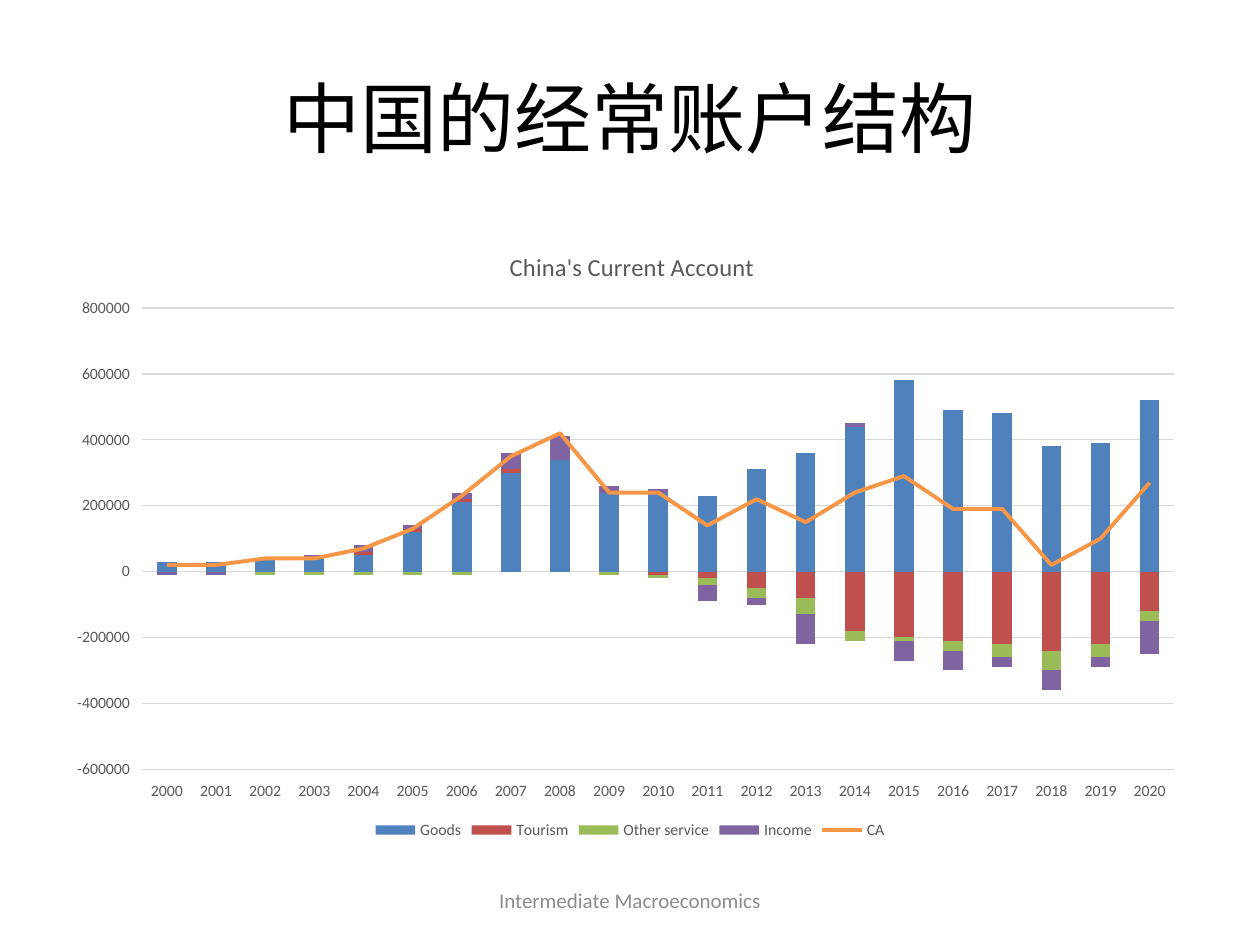
from lxml import etree
from pptx import Presentation
from pptx.chart.data import CategoryChartData
from pptx.dml.color import RGBColor
from pptx.enum.chart import (XL_CHART_TYPE, XL_LEGEND_POSITION, XL_MARKER_STYLE,
                             XL_TICK_LABEL_POSITION, XL_TICK_MARK)
from pptx.enum.text import MSO_ANCHOR, PP_ALIGN
from pptx.oxml import parse_xml
from pptx.oxml.ns import nsdecls, qn
from pptx.util import Cm, Pt

STACKED = XL_CHART_TYPE.COLUMN_STACKED
BOTTOM = XL_LEGEND_POSITION.BOTTOM
NO_MARKER = XL_MARKER_STYLE.NONE
LOW_LABELS = XL_TICK_LABEL_POSITION.LOW
NO_TICK = XL_TICK_MARK.NONE
MIDDLE = MSO_ANCHOR.MIDDLE
CENTER = PP_ALIGN.CENTER

FONT = "Calibri"
BLACK = RGBColor(0x00, 0x00, 0x00)
FOOTER_GRAY = RGBColor(0x8C, 0x8C, 0x8C)
LABEL_GRAY = RGBColor(0x59, 0x59, 0x59)
GRID_GRAY = RGBColor(0xD9, 0xD9, 0xD9)
BLUE = RGBColor(0x4F, 0x81, 0xBD)
RED = RGBColor(0xC0, 0x50, 0x4D)
GREEN = RGBColor(0x9B, 0xBB, 0x59)
PURPLE = RGBColor(0x80, 0x64, 0xA2)
ORANGE = RGBColor(0xF7, 0x96, 0x46)

# Current account items, in units of 10,000
YEARS = [str(year) for year in range(2000, 2021)]
UNIT = 10000
ACCOUNTS = [
    ("Goods", BLUE, [3, 3, 4, 4, 5, 12, 21, 30, 34, 24, 24,
                     23, 31, 36, 44, 58, 49, 48, 38, 39, 52]),
    ("Tourism", RED, [0, 0, 0, 0, 1, 1, 1, 1, 0, 0, -1,
                      -2, -5, -8, -18, -20, -21, -22, -24, -22, -12]),
    ("Other service", GREEN, [0, 0, -1, -1, -1, -1, -1, 0, 0, -1, -1,
                              -2, -3, -5, -3, -1, -3, -4, -6, -4, -3]),
    ("Income", PURPLE, [-1, -1, 0, 1, 2, 1, 2, 5, 7, 2, 1,
                        -5, -2, -9, 1, -6, -6, -3, -6, -3, -10]),
    ("CA", ORANGE, [2, 2, 4, 4, 7, 13, 23, 35, 42, 24, 24,
                    14, 22, 15, 24, 29, 19, 19, 2, 10, 27]),
]


def write_text(text_frame, text, size, color):
    text_frame.text = text
    paragraph = text_frame.paragraphs[0]
    paragraph.alignment = CENTER
    font = paragraph.runs[0].font
    font.name, font.size, font.bold = FONT, Pt(size), False
    font.color.rgb = color


def set_layout(parent, index, **fractions):
    for old_layout in parent.findall(qn("c:layout")):
        parent.remove(old_layout)
    layout = parse_xml(f"<c:layout {nsdecls('c')}><c:manualLayout/></c:layout>")
    settings = {"xMode": "edge", "yMode": "edge", **fractions}
    if "w" in fractions:
        settings = {"layoutTarget": "inner", **settings}
    for name, value in settings.items():
        etree.SubElement(layout[0], qn(f"c:{name}")).set("val", str(value))
    parent.insert(index, layout)


presentation = Presentation()
presentation.slide_width, presentation.slide_height = Cm(25.4), Cm(19.05)
slide = presentation.slides.add_slide(presentation.slide_layouts[5])

# Title
title = slide.shapes.title
title.left, title.top, title.width, title.height = Cm(1.27), Cm(0.76), Cm(22.86), Cm(3.18)
title.text_frame.vertical_anchor = MIDDLE
write_text(title.text_frame, "中国的经常账户结构", 44, BLACK)

# Footer
footer = slide.shapes.add_textbox(Cm(8.68), Cm(17.65), Cm(8.04), Cm(1.01))
footer.text_frame.word_wrap = True
footer.text_frame.vertical_anchor = MIDDLE
write_text(footer.text_frame, "Intermediate Macroeconomics", 12, FOOTER_GRAY)

# Chart
chart_data = CategoryChartData()
chart_data.categories = YEARS
for name, color, values in ACCOUNTS:
    chart_data.add_series(name, [value * UNIT for value in values])
chart = slide.shapes.add_chart(STACKED, Cm(1.27), Cm(4.45), Cm(22.86), Cm(12.57),
                               chart_data).chart
chart.font.name, chart.font.size = FONT, Pt(9)
chart.font.color.rgb = LABEL_GRAY
chart.has_title = True
write_text(chart.chart_title.text_frame, "China's Current Account", 14, LABEL_GRAY)
chart.has_legend = True
chart.legend.position = BOTTOM
chart.legend.include_in_layout = False

# Move the last series from the columns to a line on the same axes
bar_chart = chart.element.xpath(".//c:barChart")[0]
line_chart = parse_xml(f'<c:lineChart {nsdecls("c")}><c:grouping val="standard"/>'
                       '<c:varyColors val="0"/></c:lineChart>')
line_series = bar_chart.findall(qn("c:ser"))[-1]
for bar_setting in line_series.findall(qn("c:invertIfNegative")):
    line_series.remove(bar_setting)
line_chart.append(line_series)
etree.SubElement(line_chart, qn("c:marker")).set("val", "1")
for axis_id in bar_chart.findall(qn("c:axId")):
    etree.SubElement(line_chart, qn("c:axId")).set("val", axis_id.get("val"))
bar_chart.addnext(line_chart)

# Series colours
columns, line_plot = chart.plots
columns.gap_width, columns.overlap = 150, 100
columns.vary_by_categories = False
for series, (name, color, values) in zip(columns.series, ACCOUNTS):
    series.invert_if_negative = False
    series.format.fill.solid()
    series.format.fill.fore_color.rgb = color
balance = line_plot.series[0]
balance.smooth = False
balance.marker.style = NO_MARKER
balance.format.line.color.rgb = ORANGE
balance.format.line.width = Pt(2.25)

# Axes
category_axis, value_axis = chart.category_axis, chart.value_axis
for axis in (category_axis, value_axis):
    axis.major_tick_mark = axis.minor_tick_mark = NO_TICK
    axis.tick_label_position = LOW_LABELS
value_axis.minimum_scale, value_axis.maximum_scale = -600000, 800000
value_axis.major_unit = 200000
value_axis.tick_labels.number_format = "General"
value_axis.tick_labels.number_format_is_linked = False
value_axis.format.line.fill.background()
value_axis.has_major_gridlines = True
for line in (category_axis.format.line, value_axis.major_gridlines.format.line):
    line.color.rgb = GRID_GRAY
    line.width = Pt(0.75)

# Positions inside the chart
set_layout(chart.element.xpath(".//c:plotArea")[0], 0, x=0.07, y=0.14, w=0.91, h=0.74)
set_layout(chart.element.xpath("./c:chart/c:title")[0], 1, x=0.39, y=0.04)

presentation.save("out.pptx")
